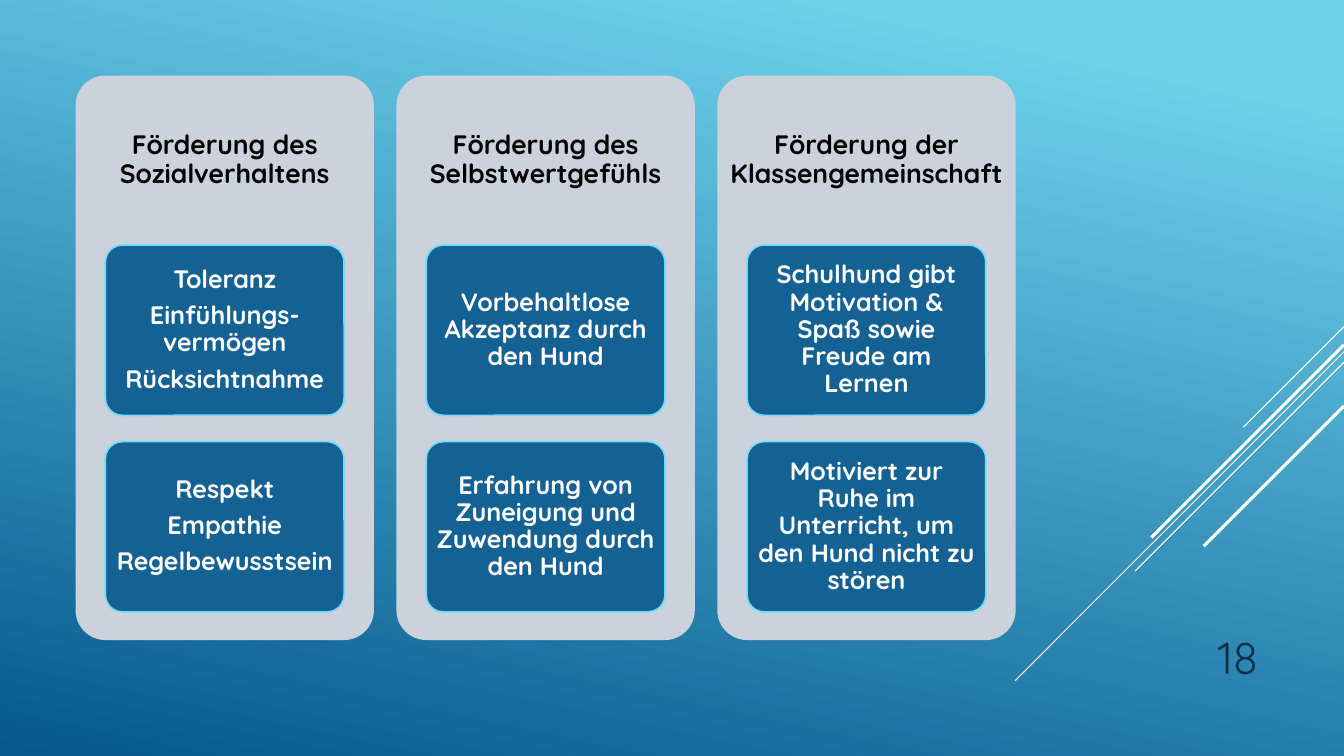
from dataclasses import dataclass

from lxml import etree
from pptx import Presentation
from pptx import util as u
from pptx.dml.color import RGBColor
from pptx.enum import shapes as es, text as et
from pptx.oxml.ns import qn

FONT = "Quicksand"
WIDE, HIGH = 960, 540
TOP, LEFT = 54, 54
CARD_W, CARD_H, STEP = 213.12, 403.2, 229.2
HEAD_H = 121
BOX_W, BOX_H, BOX_TOP, BOX_STEP = 170.6, 121.7, 175, 140.4


@dataclass
class Ray:
    y: float
    run: float
    width: float


@dataclass
class Card:
    head: str
    boxes: list[list[str]]


RAYS = [
    Ray(233.3, 72, 0.75),
    Ray(251.3, 234.9, 0.75),
    Ray(258.7, 149.3, 0.75),
    Ray(246.3, 137.6, 2.25),
    Ray(290, 100.2, 2.25),
]

CARDS = [
    Card("Förderung des Sozialverhaltens", [
        ["Toleranz", "Einfühlungs-vermögen", "Rücksichtnahme"],
        ["Respekt", "Empathie", "Regelbewusstsein"],
    ]),
    Card("Förderung des Selbstwertgefühls", [
        ["Vorbehaltlose Akzeptanz durch den Hund"],
        ["Erfahrung von Zuneigung und Zuwendung durch den Hund"],
    ]),
    Card("Förderung der Klassengemeinschaft", [
        ["Schulhund gibt Motivation & Spaß sowie Freude am Lernen"],
        ["Motiviert zur Ruhe im Unterricht, um den Hund nicht zu stören"],
    ]),
]


def tint(color, code: str) -> None:
    color.rgb = RGBColor.from_string(code)


def write(shape, lines: list[str], *, size: float, code: str, bold=True,
          align=et.PP_ALIGN.CENTER, anchor=et.MSO_ANCHOR.MIDDLE,
          side=3.6, edge=3.0, lead=0.9, after=0.0) -> None:
    frame = shape.text_frame
    frame.word_wrap = True
    frame.vertical_anchor = anchor
    frame.margin_left = frame.margin_right = u.Pt(side)
    frame.margin_top = frame.margin_bottom = u.Pt(edge)
    for i, line in enumerate(lines):
        para = frame.add_paragraph() if i else frame.paragraphs[0]
        para.alignment = align
        para.line_spacing = lead
        para.space_after = u.Pt(after)
        run = para.add_run()
        run.text = line
        run.font.name = FONT
        run.font.size = u.Pt(size)
        run.font.bold = bold
        tint(run.font.color, code)


def label(slide, x: float, y: float, w: float, h: float):
    return slide.shapes.add_textbox(u.Pt(x), u.Pt(y), u.Pt(w), u.Pt(h))


def panel(slide, x: float, y: float, w: float, h: float, fill: str, edge: str = ""):
    shape = slide.shapes.add_shape(
        es.MSO_SHAPE.ROUNDED_RECTANGLE, u.Pt(x), u.Pt(y), u.Pt(w), u.Pt(h))
    shape.adjustments[0] = 0.1
    shape.shadow.inherit = False
    shape.fill.solid()
    tint(shape.fill.fore_color, fill)
    if edge:
        tint(shape.line.color, edge)
        shape.line.width = u.Pt(1.25)
    else:
        shape.line.fill.background()
    return shape


def draw_ray(slide, ray: Ray) -> None:
    line = slide.shapes.add_connector(
        es.MSO_CONNECTOR.STRAIGHT, u.Pt(WIDE), u.Pt(ray.y),
        u.Pt(WIDE - ray.run), u.Pt(ray.y + ray.run))
    tint(line.line.color, "FFFFFF")
    line.line.width = u.Pt(ray.width)
    etree.SubElement(line._element.spPr, qn("a:effectLst"))


def draw_card(slide, card: Card, x: float) -> None:
    panel(slide, x, TOP, CARD_W, CARD_H, "CCD2DC")
    head = label(slide, x, TOP, CARD_W, HEAD_H)
    write(head, [card.head], size=19, code="000000", side=5.7, edge=5.7, after=6.65)
    for row, lines in enumerate(card.boxes):
        box = panel(slide, x + (CARD_W - BOX_W) / 2, BOX_TOP + row * BOX_STEP,
                    BOX_W, BOX_H, "146194", "76DBF4")
        write(box, lines, size=18, code="FFFFFF", after=6.3)


def paint(slide) -> None:
    fill = slide.background.fill
    fill.gradient()
    fill.gradient_angle = 258
    for stop, (place, code) in zip(fill.gradient_stops, [(0.1, "6ED2EB"), (1, "06588E")]):
        stop.position = place
        tint(stop.color, code)


def main() -> None:
    deck = Presentation()
    deck.slide_width, deck.slide_height = u.Pt(WIDE), u.Pt(HIGH)
    slide = deck.slides.add_slide(deck.slide_layouts[6])
    paint(slide)
    for ray in RAYS:
        draw_ray(slide, ray)
    write(label(slide, 815.8, 439.2, 90, 52.6), ["18"], size=32, code="0A304A",
          bold=False, align=et.PP_ALIGN.RIGHT, anchor=et.MSO_ANCHOR.BOTTOM,
          side=7.2, edge=3.6, lead=1.0)
    for col, card in enumerate(CARDS):
        draw_card(slide, card, LEFT + col * STEP)
    deck.save("out.pptx")


if __name__ == "__main__":
    main()
